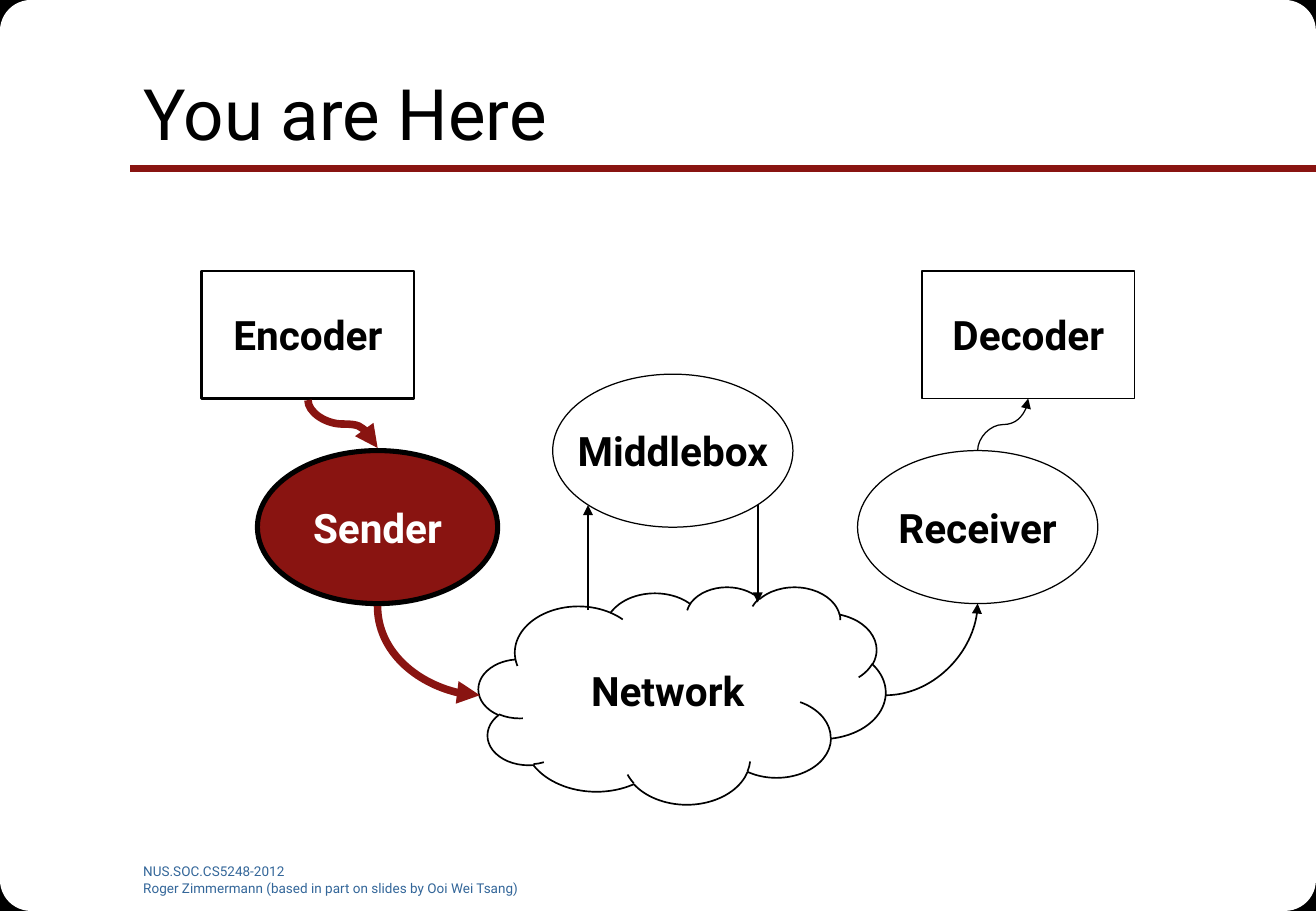
import pptx
import pptx.util
import pptx.dml.color
import pptx.enum.shapes
import pptx.enum.text
import pptx.oxml.ns
import lxml.etree

Pt = pptx.util.Pt
SHAPE = pptx.enum.shapes.MSO_SHAPE
CONNECTOR = pptx.enum.shapes.MSO_CONNECTOR
ALIGN = pptx.enum.text.PP_ALIGN
ANCHOR = pptx.enum.text.MSO_ANCHOR
qn = pptx.oxml.ns.qn

FONT = "Roboto"
COLORS = {"black": "000000", "white": "FFFFFF", "red": "891411", "blue": "336699"}
WIDTH, HEIGHT = 780, 540


def rgb(name):
    return pptx.dml.color.RGBColor.from_string(COLORS[name])


def add_run(p, text, size, color, bold=False):
    r = p.add_run()
    r.text = text
    r.font.name = FONT
    r.font.size = Pt(size)
    r.font.bold = bold
    r.font.color.rgb = rgb(color)


def add_box(s, kind, box, fill, line=None, weight=0.75):
    sp = s.shapes.add_shape(kind, *map(Pt, box))
    sp.shadow.inherit = False
    sp.fill.solid()
    sp.fill.fore_color.rgb = rgb(fill)
    if line:
        sp.line.color.rgb = rgb(line)
        sp.line.width = Pt(weight)
    else:
        sp.line.fill.background()
    return sp


def add_node(s, kind, box, text, weight, fill="white", color="black"):
    sp = add_box(s, kind, box, fill, "black", weight)
    tf = sp.text_frame
    tf.word_wrap = False
    tf.vertical_anchor = ANCHOR.MIDDLE
    p = tf.paragraphs[0]
    p.alignment = ALIGN.CENTER
    add_run(p, text, 24, color, bold=True)


def add_line(s, start, end, color, weight, kind=CONNECTOR.STRAIGHT, arrow=True):
    cxn = s.shapes.add_connector(kind, *map(Pt, start + end))
    cxn.line.color.rgb = rgb(color)
    cxn.line.width = Pt(weight)
    sp_pr = cxn._element.spPr
    if arrow:
        lxml.etree.SubElement(sp_pr.find(qn("a:ln")), qn("a:tailEnd"), type="triangle")
    lxml.etree.SubElement(sp_pr, qn("a:effectLst"))
    return cxn


def add_curve(s, start, end, color, weight, preset, vertical=True):
    """Curved arrow to the right; a vertical start needs a quarter turn."""
    cxn = add_line(s, start, end, color, weight, CONNECTOR.CURVE)
    sp_pr = cxn._element.spPr
    sp_pr.find(qn("a:prstGeom")).set("prst", preset)
    if vertical:
        (x1, y1), (x2, y2) = start, end
        w, h = abs(y2 - y1), abs(x2 - x1)
        cxn.left, cxn.top = Pt((x1 + x2 - w) / 2), Pt((y1 + y2 - h) / 2)
        cxn.width, cxn.height = Pt(w), Pt(h)
        xfrm = sp_pr.find(qn("a:xfrm"))
        xfrm.set("rot", "16200000")
        xfrm.set("flipH", "1" if y2 > y1 else "0")
        xfrm.set("flipV", "0")


def draw_corners(s, width, height):
    # Black squares first, then the rounded white panels over them
    for kind, w, h, fill, line in ((SHAPE.RECTANGLE, 33.6, 31.7, "black", "black"),
                                   (SHAPE.ROUNDED_RECTANGLE, 119.5, 110.2, "white", None)):
        for x in (0, width - w):
            for y in (0, height - h):
                add_box(s, kind, (x, y, w, h), fill, line)


def draw_title(s, box, text):
    x, y, w, h = box
    add_line(s, (WIDTH, y + 78.4), (x - 0.7, y + 78.4), "red", 4.5, arrow=False)
    title = s.shapes.title
    s.shapes._spTree.append(title._element)  # in front of the corner panels
    title.left, title.top, title.width, title.height = map(Pt, box)
    tf = title.text_frame
    tf.auto_size = pptx.enum.text.MSO_AUTO_SIZE.NONE
    tf.vertical_anchor = ANCHOR.MIDDLE
    p = tf.paragraphs[0]
    p.alignment = ALIGN.LEFT
    add_run(p, text, 42, "black")


def draw_footer(s, box, lines):
    tf = s.shapes.add_textbox(*map(Pt, box)).text_frame
    tf.word_wrap = True
    for i, text in enumerate(lines):
        p = tf.add_paragraph() if i else tf.paragraphs[0]
        add_run(p, text, 8, "blue")


def draw_diagram(s, box):
    x, y, w, h = box
    rect_w, rect_h = 126, 75.6
    oval_w, oval_h = 142.4, 90.7
    oval_y = y + 106.5
    sender_x, receiver_x = x + 33.1, x + 388.8
    middle_x, middle_y = x + 208.1, y + 61.2
    decoder_x = x + w - rect_w
    cloud_x, cloud_w, cloud_h = x + 164.2, 241.2, 128.9
    cloud_y = y + h - cloud_h

    # Nodes
    add_node(s, SHAPE.CLOUD, (cloud_x, cloud_y, cloud_w, cloud_h), "Network", 1)
    add_node(s, SHAPE.RECTANGLE, (x, y, rect_w, rect_h), "Encoder", 1.5)
    add_node(s, SHAPE.OVAL, (sender_x, oval_y, oval_w, oval_h), "Sender", 3, "red", "white")
    add_node(s, SHAPE.OVAL, (middle_x, middle_y, oval_w, oval_h), "Middlebox", 0.75)
    add_node(s, SHAPE.OVAL, (receiver_x, oval_y, oval_w, oval_h), "Receiver", 0.75)
    add_node(s, SHAPE.RECTANGLE, (decoder_x, y, rect_w, rect_h), "Decoder", 1)

    # Sending path
    sender_mid = sender_x + oval_w / 2
    cloud_mid = cloud_y + cloud_h / 2
    add_curve(s, (x + rect_w / 2, y + rect_h + 1), (sender_mid, oval_y - 1.5),
              "red", 4.5, "curvedConnector3")
    add_curve(s, (sender_mid, oval_y + oval_h + 1.5), (cloud_x + 0.7, cloud_mid),
              "red", 4.5, "curvedConnector2")

    # Detour through the middlebox
    inset = 20.9
    contact_y = middle_y + 77.6
    up_x, down_x = middle_x + inset, middle_x + oval_w - inset
    add_line(s, (up_x, cloud_y + 14), (up_x, contact_y), "black", 1)
    add_line(s, (down_x, contact_y), (down_x, cloud_y + 9.4), "black", 1)

    # Receiving path
    receiver_mid = receiver_x + oval_w / 2
    add_curve(s, (cloud_x + cloud_w, cloud_mid), (receiver_mid, oval_y + oval_h),
              "black", 1, "curvedConnector2", vertical=False)
    add_curve(s, (receiver_mid, oval_y), (decoder_x + rect_w / 2, y + rect_h),
              "black", 0.75, "curvedConnector3")


def main():
    prs = pptx.Presentation()
    prs.slide_width, prs.slide_height = Pt(WIDTH), Pt(HEIGHT)
    s = prs.slides.add_slide(prs.slide_layouts.get_by_name("Title Only"))
    s.background.fill.solid()
    s.background.fill.fore_color.rgb = rgb("white")
    draw_corners(s, WIDTH, HEIGHT)
    draw_footer(s, (77.8, 508.3, 246.2, 20.2),
                ("NUS.SOC.CS5248-2012",
                 "Roger Zimmermann (based in part on slides by Ooi Wei Tsang)"))
    draw_title(s, (77.8, 21.6, 663.1, 90), "You are Here")
    draw_diagram(s, (119.5, 160.6, 553, 316))
    prs.save("out.pptx")


if __name__ == "__main__":
    main()
